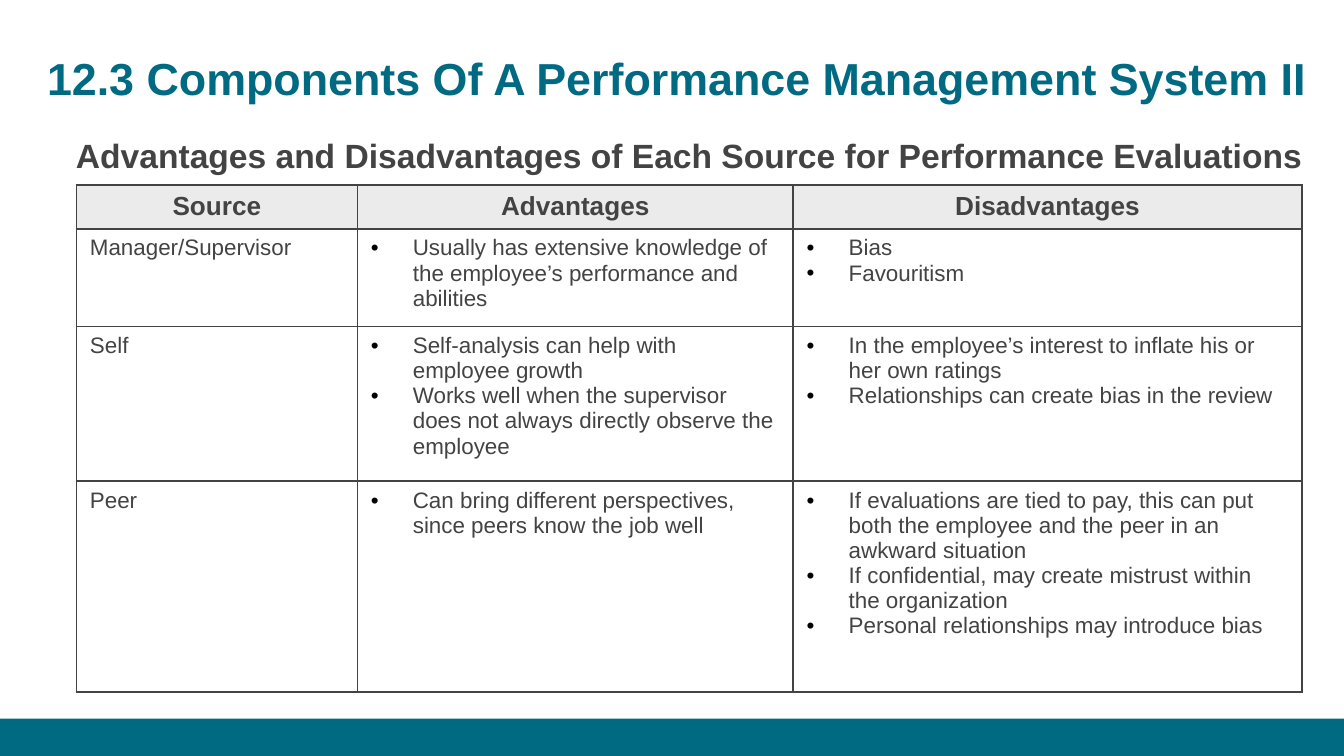
from lxml import etree
from pptx import Presentation
from pptx.dml.color import RGBColor
from pptx.enum.shapes import MSO_SHAPE
from pptx.enum.text import MSO_ANCHOR, MSO_AUTO_SIZE, PP_ALIGN
from pptx.oxml.ns import qn
from pptx.util import Pt

RECTANGLE = MSO_SHAPE.RECTANGLE
TOP, MIDDLE = MSO_ANCHOR.TOP, MSO_ANCHOR.MIDDLE
LEFT, CENTER = PP_ALIGN.LEFT, PP_ALIGN.CENTER
NO_AUTOFIT = MSO_AUTO_SIZE.NONE

TITLE = "12.3 Components Of A Performance Management System II"
SUBTITLE = "Advantages and Disadvantages of Each Source for Performance Evaluations"
HEADERS = ["Source", "Advantages", "Disadvantages"]
SOURCES = [
    ("Manager/Supervisor",
     ["Usually has extensive knowledge of the employee’s performance and abilities"],
     ["Bias", "Favouritism"]),
    ("Self",
     ["Self-analysis can help with employee growth",
      "Works well when the supervisor does not always directly observe the employee"],
     ["In the employee’s interest to inflate his or her own ratings",
      "Relationships can create bias in the review"]),
    ("Peer",
     ["Can bring different perspectives, since peers know the job well"],
     ["If evaluations are tied to pay, this can put both the employee and the peer "
      "in an awkward situation",
      "If confidential, may create mistrust within the organization",
      "Personal relationships may introduce bias"]),
]

COLORS = {"teal": "006A83", "text": "434343", "header": "EBEBEB", "bullet": "000000"}
FORMATS = {
    "title": {"size": Pt(24), "bold": True, "color": "teal"},
    "subtitle": {"size": Pt(18), "bold": True, "color": "text"},
    "header": {"size": Pt(14), "bold": True, "color": "text"},
    "cell": {"size": Pt(12), "bold": False, "color": "text"},
}
SLIDE_WIDTH, SLIDE_HEIGHT = 720, 405
FOOTER_HEIGHT = 20
TABLE_LEFT, TABLE_TOP = 41, 99
COLUMN_WIDTHS = [150.5, 233.5, 272.5]
ROW_HEIGHTS = [23.6, 52.4, 82.8, 113]
BULLET_INDENT = 22.5


def rgb(name):
    return RGBColor.from_string(COLORS[name])


def format_font(paragraph, format_name):
    values = dict(FORMATS[format_name], name="Arial")
    paragraph.font.color.rgb = rgb(values.pop("color"))
    for attribute, value in values.items():
        setattr(paragraph.font, attribute, value)


def set_indent(paragraph, left, first, bullet=None):
    """Set margin and first-line indent, with a bullet or explicitly none."""
    properties = paragraph._p.get_or_add_pPr()
    properties.set("marL", str(Pt(left)))
    properties.set("indent", str(Pt(first)))
    if bullet is None:
        etree.SubElement(properties, qn("a:buNone"))
        return
    color = etree.SubElement(properties, qn("a:buClr"))
    etree.SubElement(color, qn("a:srgbClr"), val=COLORS["bullet"])
    etree.SubElement(properties, qn("a:buFont"), typeface="Arial")
    etree.SubElement(properties, qn("a:buChar"), char=bullet)


def fill_placeholder(shape, text, box, anchor, format_name, indent=0):
    shape.left, shape.top, shape.width, shape.height = map(Pt, box)
    frame = shape.text_frame
    values = {"word_wrap": True, "auto_size": NO_AUTOFIT, "vertical_anchor": anchor}
    values.update({f"margin_{side}": Pt(7.2) for side in ("left", "top", "right", "bottom")})
    for attribute, value in values.items():
        setattr(frame, attribute, value)
    frame.text = text
    paragraph = frame.paragraphs[0]
    set_indent(paragraph, indent, 0)
    paragraph.alignment = LEFT
    paragraph.space_before = Pt(0)
    format_font(paragraph, format_name)


def add_borders(cell):
    properties = cell._tc.get_or_add_tcPr()
    for side in ("lnL", "lnR", "lnT", "lnB"):
        line = etree.SubElement(properties, qn(f"a:{side}"), w=str(Pt(1)))
        fill = etree.SubElement(line, qn("a:solidFill"))
        etree.SubElement(fill, qn("a:srgbClr"), val=COLORS["text"])


def fill_cell(cell, content, is_header):
    """Write a plain string, or a list as bulleted paragraphs."""
    add_borders(cell)
    if is_header:
        cell.fill.solid()
        cell.fill.fore_color.rgb = rgb("header")
    else:
        cell.fill.background()
    bulleted = isinstance(content, list)
    cell.text = "\n".join(content) if bulleted else content
    for paragraph in cell.text_frame.paragraphs:
        if bulleted:
            set_indent(paragraph, BULLET_INDENT, -BULLET_INDENT, "•")
        paragraph.alignment = CENTER if is_header else LEFT
        format_font(paragraph, "header" if is_header else "cell")


def add_source_table(slide):
    rows = [HEADERS, *SOURCES]
    table = slide.shapes.add_table(
        len(rows), len(HEADERS), Pt(TABLE_LEFT), Pt(TABLE_TOP),
        Pt(sum(COLUMN_WIDTHS)), Pt(sum(ROW_HEIGHTS))).table
    table.first_row = table.horz_banding = False
    for column, width in zip(table.columns, COLUMN_WIDTHS):
        column.width = Pt(width)
    for row_index, (contents, height) in enumerate(zip(rows, ROW_HEIGHTS)):
        table.rows[row_index].height = Pt(height)
        for column_index, content in enumerate(contents):
            fill_cell(table.cell(row_index, column_index), content, row_index == 0)


def add_footer_bar(slide):
    bar = slide.shapes.add_shape(
        RECTANGLE, 0, Pt(SLIDE_HEIGHT - FOOTER_HEIGHT), Pt(SLIDE_WIDTH), Pt(FOOTER_HEIGHT))
    bar.shadow.inherit = False
    bar.fill.solid()
    bar.fill.fore_color.rgb = rgb("teal")
    bar.line.fill.background()


def main():
    presentation = Presentation()
    presentation.slide_width, presentation.slide_height = Pt(SLIDE_WIDTH), Pt(SLIDE_HEIGHT)
    slide = presentation.slides.add_slide(presentation.slide_layouts[1])
    add_footer_bar(slide)
    fill_placeholder(slide.shapes.title, TITLE, (18, 18, 702, 47.5), MIDDLE, "title")
    fill_placeholder(slide.placeholders[1], SUBTITLE, (24.5, 65, 684, 263), TOP,
                     "subtitle", indent=9)
    add_source_table(slide)
    presentation.save("out.pptx")


if __name__ == "__main__":
    main()
